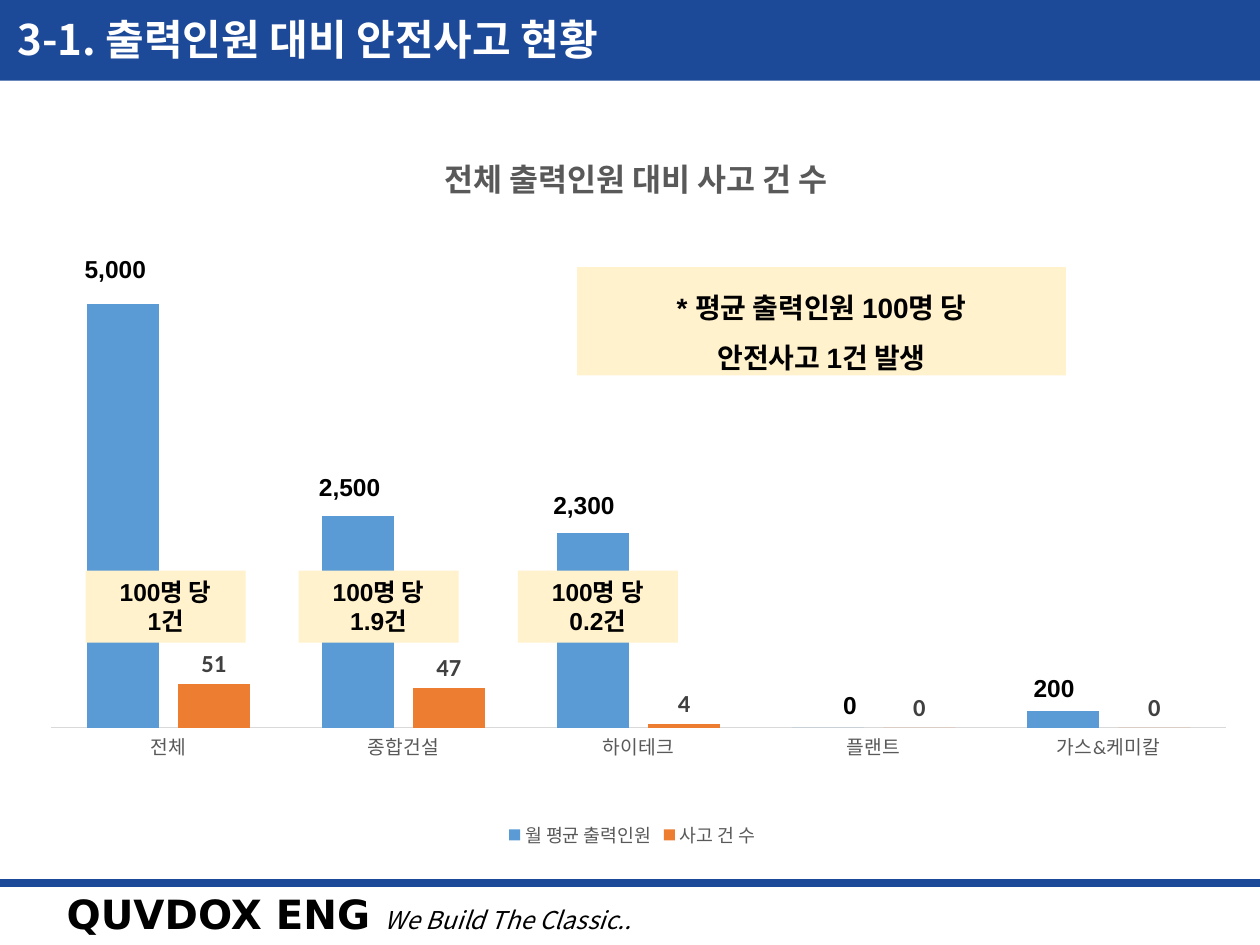
import pptx
import pptx.chart.data
import pptx.dml.color
import pptx.enum.chart
import pptx.enum.shapes
import pptx.enum.text
import pptx.oxml
import pptx.oxml.ns
import pptx.util

# The slide is a grid of 100 columns by 75 rows
COLUMNS, ROWS = 100, 75
CELL = pptx.util.Inches(0.1)

COLORS = {
    "navy": "1D4999",
    "white": "FFFFFF",
    "black": "000000",
    "cream": "FFF2CC",
    "workers": "5B9BD5",
    "accidents": "ED7D31",
    "grey": "595959",
    "label": "404040",
    "axis": "D9D9D9",
}
KOREAN, LATIN, CHART_FONT = "Noto Sans CJK KR", "Arial", "Calibri"


def color(name):
    return pptx.dml.color.RGBColor.from_string(COLORS[name])


def grid(*cells):
    return [round(cell * CELL) for cell in cells]


def style(font, name, size, fill, bold=False, italic=False):
    font.name, font.size = name, pptx.util.Pt(size)
    font.bold, font.italic = bold, italic
    font.color.rgb = color(fill)


def add_panel(slide, area, fill):
    panel = slide.shapes.add_shape(
        pptx.enum.shapes.MSO_SHAPE.RECTANGLE, *grid(*area))
    panel.shadow.inherit = False
    panel.fill.solid()
    panel.fill.fore_color.rgb = color(fill)
    panel.line.fill.background()
    return panel


def add_callout(slide, area, lines, size, spacing=1.0):
    frame = add_panel(slide, area, "cream").text_frame
    frame.word_wrap = True
    frame.vertical_anchor = pptx.enum.text.MSO_ANCHOR.TOP
    frame.text = "\n".join(lines)
    for line in frame.paragraphs:
        line.alignment = pptx.enum.text.PP_ALIGN.CENTER
        line.line_spacing = spacing
        style(line.font, LATIN, size, "black", bold=True)


def add_text(slide, area, text, wrap=True):
    frame = slide.shapes.add_textbox(*grid(*area)).text_frame
    frame.word_wrap = wrap
    line = frame.paragraphs[0]
    if text:
        line.text = text
    return line


def add_bar_label(slide, left, top, text):
    label = add_text(slide, (left, top, 7.9, 3.4), text)
    label.alignment = pptx.enum.text.PP_ALIGN.CENTER
    style(label.font, LATIN, 14, "black", bold=True)


def place(element, index, target="", **shares):
    """Give a chart part a manual position, in shares of the chart."""
    for old in element.findall(pptx.oxml.ns.qn("c:layout")):
        element.remove(old)
    modes = "".join(f'<c:{axis}Mode val="edge"/>' for axis in "xy")
    sizes = "".join(f'<c:{key} val="{share}"/>' for key, share in shares.items())
    element.insert(index, pptx.oxml.parse_xml(
        f'<c:layout {pptx.oxml.ns.nsdecls("c")}><c:manualLayout>'
        f'{target}{modes}{sizes}</c:manualLayout></c:layout>'))


def add_accident_chart(slide):
    data = pptx.chart.data.CategoryChartData()
    data.categories = ["전체", "종합건설", "하이테크", "플랜트", "가스&케미칼"]
    data.add_series("월 평균 출력인원", [500, 250, 230, 0, 20])
    data.add_series("사고 건 수", [51, 47, 4, 0, 0])
    chart = slide.shapes.add_chart(
        pptx.enum.chart.XL_CHART_TYPE.COLUMN_CLUSTERED,
        *grid(2.1, 9.2, 96.2, 58.5), data).chart
    style(chart.font, CHART_FONT, 10, "black")

    # Title and legend
    chart.has_title = True
    chart.chart_title.text_frame.text = "전체 출력인원 대비 사고 건 수"
    style(chart.chart_title.text_frame.paragraphs[0].font,
          CHART_FONT, 18, "grey", bold=True)
    place(chart.element.xpath("c:chart/c:title")[0], 1, x=0.34, y=0.04)
    chart.has_legend = True
    chart.legend.position = pptx.enum.chart.XL_LEGEND_POSITION.BOTTOM
    chart.legend.include_in_layout = False
    style(chart.legend.font, CHART_FONT, 10.5, "grey")

    # Axes
    categories, values = chart.category_axis, chart.value_axis
    categories.major_tick_mark = pptx.enum.chart.XL_TICK_MARK.NONE
    categories.format.line.color.rgb = color("axis")
    categories.format.line.width = pptx.util.Pt(0.75)
    style(categories.tick_labels.font, CHART_FONT, 11, "grey")
    values.minimum_scale, values.maximum_scale = 0, 600
    values.has_major_gridlines = False
    values.visible = False

    # Columns
    plot = chart.plots[0]
    plot.vary_by_categories = False
    plot.gap_width, plot.overlap = 100, -27
    for series, fill in zip(plot.series, ("workers", "accidents")):
        series.format.fill.solid()
        series.format.fill.fore_color.rgb = color(fill)
    counts = plot.series[1].data_labels
    counts.show_value = True
    counts.position = pptx.enum.chart.XL_LABEL_POSITION.OUTSIDE_END
    style(counts.font, CHART_FONT, 14, "label", bold=True)
    place(chart.element.xpath("c:chart/c:plotArea")[0], 0,
          '<c:layoutTarget val="inner"/>', x=0.02, y=0.14, w=0.97, h=0.69)


def add_header(slide):
    add_panel(slide, (0, 0, COLUMNS, 6.4), "navy")
    heading = add_text(slide, (0.4, 0.6, 53.3, 5),
                       "3-1. 출력인원 대비 안전사고 현황", wrap=False)
    style(heading.font, KOREAN, 24, "white", bold=True)


def add_footer(slide):
    rule = slide.shapes.add_connector(
        pptx.enum.shapes.MSO_CONNECTOR.STRAIGHT, *grid(0, 70.1, COLUMNS, 70.1))
    rule.line.color.rgb = color("navy")
    rule.line.width = pptx.util.Pt(4.5)
    rule.element.spPr.append(pptx.oxml.parse_xml(
        f'<a:effectLst {pptx.oxml.ns.nsdecls("a")}/>'))

    # Company name and slogan
    footer = add_text(slide, (4.3, 70.8, 81.8, 4.1), "")
    footer.line_spacing = 0.8
    company, slogan = footer.add_run(), footer.add_run()
    company.text, slogan.text = "QUVDOX ENG ", "We Build The Classic.."
    style(company.font, "DejaVu Sans", 23, "black", bold=True)
    style(slogan.font, KOREAN, 14, "black", italic=True)


def main():
    deck = pptx.Presentation()
    deck.slide_width, deck.slide_height = grid(COLUMNS, ROWS)
    slide = deck.slides.add_slide(deck.slide_layouts[6])

    add_header(slide)
    add_footer(slide)
    add_accident_chart(slide)

    # Monthly average workforce above the columns
    for left, top, workforce in ((5.2, 19.7, "5,000"), (23.8, 37, "2,500"),
                                 (42.4, 38.4, "2,300"), (79.7, 52.9, "200"),
                                 (63.5, 54.3, "0")):
        add_bar_label(slide, left, top, workforce)

    # Accident rates
    add_callout(slide, (45.8, 21.2, 38.8, 8.6),
                ("* 평균 출력인원 100명 당", "안전사고 1건 발생"), 16, spacing=1.5)
    for left, rate in ((6.8, "1건"), (23.7, "1.9건"), (41.1, "0.2건")):
        add_callout(slide, (left, 45.3, 12.7, 5.7), ("100명 당", rate), 14)

    deck.save("out.pptx")


if __name__ == "__main__":
    main()
